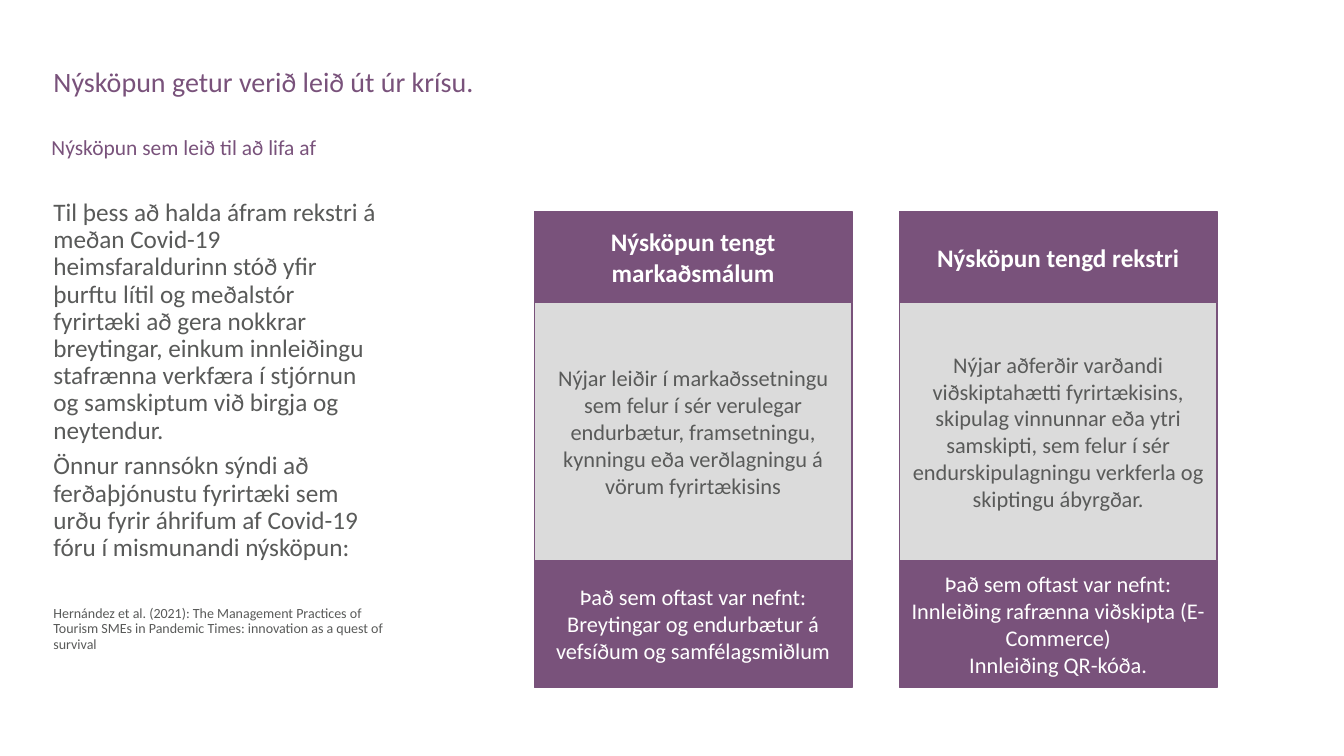
from lxml import etree
from pptx import Presentation
from pptx import util as u
from pptx.dml.color import RGBColor
from pptx.enum import shapes, text
from pptx.oxml.ns import qn

PURPLE = RGBColor(0x79, 0x52, 0x7B)
GREY = RGBColor(0xDB, 0xDB, 0xDB)
DARK = RGBColor(0x59, 0x5A, 0x59)
WHITE = RGBColor(0xFF, 0xFF, 0xFF)

STORY = [
    ("Til þess að halda áfram rekstri á meðan Covid-19 heimsfaraldurinn stóð yfir "
     "þurftu lítil og meðalstór fyrirtæki að gera nokkrar breytingar, einkum "
     "innleiðingu stafrænna verkfæra í stjórnun og samskiptum við birgja og neytendur.", 18, 0),
    ("Önnur rannsókn sýndi að ferðaþjónustu fyrirtæki sem urðu fyrir áhrifum af "
     "Covid-19 fóru í mismunandi nýsköpun:", 18, 6),
    ("Hernández et al. (2021): The Management Practices of Tourism SMEs in Pandemic "
     "Times: innovation as a quest of survival", 10, 32),
]
CARDS = [
    ("Nýsköpun tengt markaðsmálum",
     "Nýjar leiðir í markaðssetningu sem felur í sér verulegar endurbætur, "
     "framsetningu, kynningu eða verðlagningu á vörum fyrirtækisins",
     "Það sem oftast var nefnt:\nBreytingar og endurbætur á vefsíðum og samfélagsmiðlum"),
    ("Nýsköpun tengd rekstri",
     "Nýjar aðferðir varðandi viðskiptahætti fyrirtækisins, skipulag vinnunnar eða "
     "ytri samskipti, sem felur í sér endurskipulagningu verkferla og skiptingu ábyrgðar.",
     "Það sem oftast var nefnt:\nInnleiðing rafrænna viðskipta (E-Commerce)\n"
     "Innleiðing QR-kóða."),
]
CARD_ROWS = [
    (0.9, PURPLE, WHITE, 18, True),
    (2.56, GREY, DARK, 16, False),
    (1.26, PURPLE, WHITE, 16, False),
]


def style_font(p, size, color, bold=False):
    for r in p.runs:
        r.font.name = "Calibri"
        r.font.size = u.Pt(size)
        r.font.bold = bold
        r.font.color.rgb = color


def place(sp, left, top, width, height):
    sp.left, sp.top = u.Inches(left), u.Inches(top)
    sp.width, sp.height = u.Inches(width), u.Inches(height)


def fill_placeholder(sp, box, items, color, anchor, spacing=0.9):
    place(sp, *box)
    tf = sp.text_frame
    tf.text = "\n".join(item[0] for item in items)
    tf.word_wrap = True
    tf.auto_size = text.MSO_AUTO_SIZE.NONE
    tf.vertical_anchor = anchor
    for p, (_, size, before) in zip(tf.paragraphs, items):
        pPr = p._p.get_or_add_pPr()
        pPr.set("marL", "0")
        pPr.set("indent", "0")
        etree.SubElement(pPr, qn("a:buNone"))
        p.alignment = text.PP_ALIGN.LEFT
        p.line_spacing = spacing
        p.space_before = u.Pt(before)
        style_font(p, size, color)


def add_card(s, left, top, width, texts):
    for words, (height, fill, color, size, bold) in zip(texts, CARD_ROWS):
        sp = s.shapes.add_shape(shapes.MSO_SHAPE.RECTANGLE, u.Inches(left), u.Inches(top),
                                u.Inches(width), u.Inches(height))
        sp.shadow.inherit = False
        sp.fill.solid()
        sp.fill.fore_color.rgb = fill
        sp.line.color.rgb = PURPLE
        sp.line.width = u.Pt(1)
        tf = sp.text_frame
        tf.text = words
        tf.word_wrap = True
        tf.vertical_anchor = text.MSO_ANCHOR.MIDDLE
        for p in tf.paragraphs:
            p.alignment = text.PP_ALIGN.CENTER
            style_font(p, size, color, bold)
        top += height


def add_innovation_slide(prs):
    s = prs.slides.add_slide(prs.slide_layouts[3])
    title, story, subtitle = list(s.placeholders)[:3]
    fill_placeholder(title, (0.43, 0.63, 12.54, 0.64),
                     [("Nýsköpun getur verið leið út úr krísu.", 20, 0)],
                     PURPLE, text.MSO_ANCHOR.TOP)
    fill_placeholder(subtitle, (0.41, 1.35, 12.56, 0.28),
                     [("Nýsköpun sem leið til að lifa af", 15.3, 0)],
                     PURPLE, text.MSO_ANCHOR.TOP, 0.7)
    fill_placeholder(story, (0.43, 1.79, 3.49, 4.87), STORY, DARK, text.MSO_ANCHOR.MIDDLE)
    for i, texts in enumerate(CARDS):
        add_card(s, 5.3 + i * 3.62, 2.1, 3.15, texts)


def main():
    prs = Presentation()
    prs.slide_width, prs.slide_height = u.Inches(13.33), u.Inches(7.5)
    add_innovation_slide(prs)
    prs.save("out.pptx")


if __name__ == "__main__":
    main()
